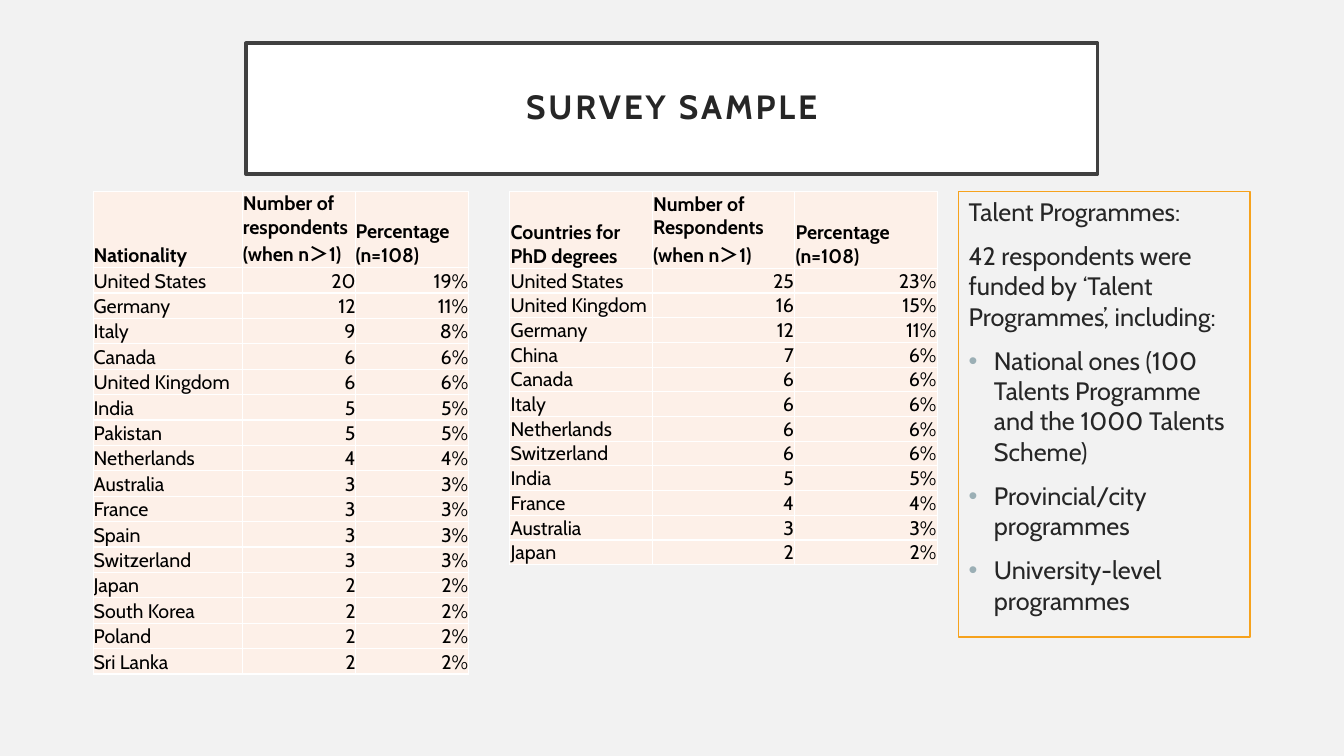
from lxml.etree import SubElement
from pptx import Presentation
from pptx.dml.color import RGBColor
from pptx.enum.shapes import MSO_SHAPE
from pptx.enum.text import MSO_ANCHOR, PP_ALIGN
from pptx.oxml import parse_xml
from pptx.oxml.ns import nsdecls, qn
from pptx.util import Cm, Pt

PAPER = RGBColor(0xF2, 0xF2, 0xF2)
WHITE = RGBColor(0xFF, 0xFF, 0xFF)
BLACK = RGBColor(0, 0, 0)
INK = RGBColor(0x26, 0x26, 0x26)
FRAME = RGBColor(0x40, 0x40, 0x40)
AMBER = RGBColor(0xF6, 0xA2, 0x1D)
PEACH = RGBColor(0xFD, 0xF0, 0xE8)
SLATE = RGBColor(0x9B, 0xAF, 0xB5)
TOTAL = 108


def write(para, text, color, **font):
    run = para.add_run()
    run.text = text
    run.font.color.rgb = color
    for key, value in {"name": "Cabin", **font}.items():
        setattr(run.font, key, value)
    return run


def add_box(left, top, width, height, color, weight):
    box = slide.shapes.add_shape(
        MSO_SHAPE.RECTANGLE, Cm(left), Cm(top), Cm(width), Cm(height))
    box.shadow.inherit = False
    box.line.color.rgb = color
    box.line.width = Pt(weight)
    box.text_frame.word_wrap = True
    return box


# Slide
deck = Presentation()
deck.slide_width, deck.slide_height = Cm(33.87), Cm(19.05)
slide = deck.slides.add_slide(deck.slide_layouts[6])
slide.background.fill.solid()
slide.background.fill.fore_color.rgb = PAPER

# Title
title = add_box(6.2, 1.09, 21.46, 3.3, FRAME, 2.5)
title.fill.solid()
title.fill.fore_color.rgb = WHITE
frame = title.text_frame
frame.vertical_anchor = MSO_ANCHOR.MIDDLE
for side in ("left", "right", "top", "bottom"):
    setattr(frame, f"margin_{side}", Cm(0.5))
para = frame.paragraphs[0]
para.alignment = PP_ALIGN.CENTER
para.line_spacing = 0.9
run = write(para, "SURVEY SAMPLE", INK, size=Pt(24), bold=True)
run.font._element.set("spc", "200")

# Tables: place, column widths, row heights, cell margin, heads, counts
tables = [
    (2.36, (3.76, 2.84, 2.84), 1.14, 0.64, 0,
     ("Nationality", "Number of respondents (when n＞1)", "Percentage (n=108)"),
     [("United States", 20), ("Germany", 12), ("Italy", 9), ("Canada", 6),
      ("United Kingdom", 6), ("India", 5), ("Pakistan", 5),
      ("Netherlands", 4), ("Australia", 3), ("France", 3), ("Spain", 3),
      ("Switzerland", 3), ("Japan", 2), ("South Korea", 2), ("Poland", 2),
      ("Sri Lanka", 2)]),
    (12.85, (3.59, 3.59, 3.59), 0.62, 0.62, 0.02,
     ("Countries for PhD degrees", "Number of Respondents (when n＞1)",
      "Percentage (n=108)"),
     [("United States", 25), ("United Kingdom", 16), ("Germany", 12),
      ("China", 7), ("Canada", 6), ("Italy", 6), ("Netherlands", 6),
      ("Switzerland", 6), ("India", 5), ("France", 4), ("Australia", 3),
      ("Japan", 2)]),
]
for left, widths, first, pitch, margin, heads, counts in tables:
    rows = [heads] + [(name, str(n), f"{n / TOTAL:.0%}") for name, n in counts]
    high = first + pitch * len(counts)
    table = slide.shapes.add_table(
        len(rows), len(widths), Cm(left), Cm(4.82),
        Cm(sum(widths)), Cm(high)).table
    table.first_row = table.horz_banding = False
    for col, width in zip(table.columns, widths):
        col.width = Cm(width)
    form = {"vertical_anchor": MSO_ANCHOR.BOTTOM, "margin_left": Cm(margin),
            "margin_right": Cm(margin), "margin_top": Cm(margin),
            "margin_bottom": 0}
    for r, row in enumerate(rows):
        table.rows[r].height = Cm(pitch if r else first)
        for c, text in enumerate(row):
            cell = table.cell(r, c)
            for key, value in form.items():
                setattr(cell, key, value)
            # White border on each side
            props = cell._tc.get_or_add_tcPr()
            for edge in ("lnL", "lnR", "lnT", "lnB"):
                props.append(parse_xml(
                    f'<a:{edge} {nsdecls("a")} w="12700"><a:solidFill>'
                    f'<a:srgbClr val="{WHITE}"/></a:solidFill></a:{edge}>'))
            cell.fill.solid()
            cell.fill.fore_color.rgb = PEACH
            para = cell.text_frame.paragraphs[0]
            para.alignment = PP_ALIGN.RIGHT if r and c else PP_ALIGN.LEFT
            write(para, text, BLACK, size=Pt(14), bold=r == 0)

# Talent programmes
panel = add_box(24.16, 4.82, 7.34, 11.23, AMBER, 1)
panel.fill.background()
frame = panel.text_frame
frame.vertical_anchor = MSO_ANCHOR.TOP
notes = [
    ("Talent Programmes:", False),
    ("42 respondents were funded by ‘Talent Programmes’, including:", False),
    ("National ones (100 Talents Programme and the 1000 Talents Scheme)", True),
    ("Provincial/city programmes", True),
    ("University-level programmes", True),
]
for i, (text, dot) in enumerate(notes):
    para = frame.add_paragraph() if i else frame.paragraphs[0]
    para.alignment = PP_ALIGN.LEFT
    para.space_before = Pt(10)
    write(para, text, INK, size=Pt(18))
    if dot:
        props = para._p.get_or_add_pPr()
        props.set("marL", str(Cm(0.64)))
        props.set("indent", str(-Cm(0.64)))
        tint = SubElement(props, qn("a:buClr"))
        SubElement(tint, qn("a:srgbClr"), val=str(SLATE))
        SubElement(props, qn("a:buFont"), typeface="Arial")
        SubElement(props, qn("a:buChar"), char="•")

deck.save("out.pptx")
